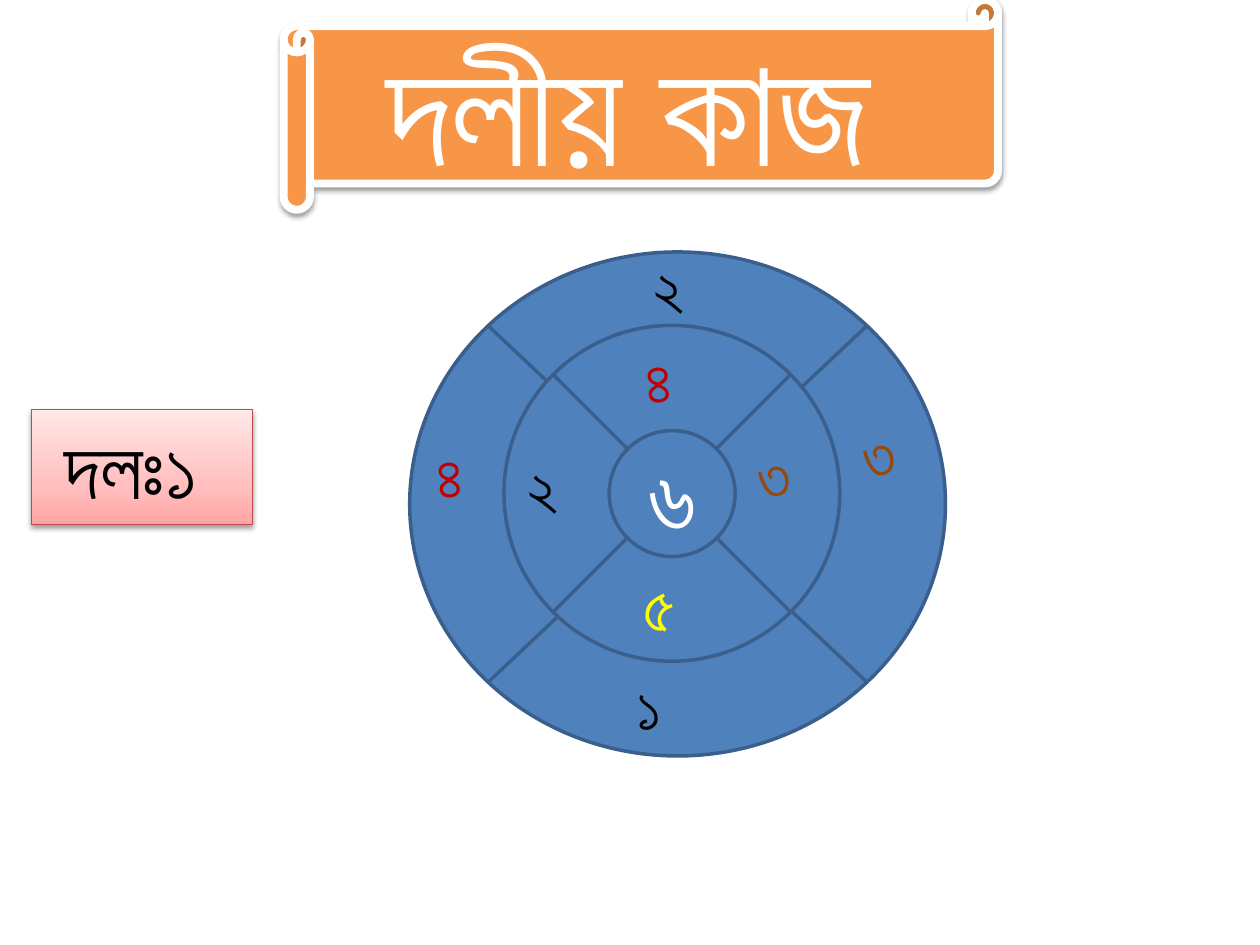
from dataclasses import dataclass

from pptx import Presentation
from pptx.dml.color import RGBColor
from pptx.enum.shapes import MSO_SHAPE
from pptx.enum.text import MSO_ANCHOR, MSO_AUTO_SIZE, PP_ALIGN
from pptx.oxml import parse_xml
from pptx.oxml.ns import nsdecls
from pptx.shapes.autoshape import Shape
from pptx.util import Cm, Pt

SCROLL = MSO_SHAPE.HORIZONTAL_SCROLL
CROSS = MSO_SHAPE.FLOWCHART_SUMMING_JUNCTION
DISC = MSO_SHAPE.FLOWCHART_CONNECTOR
RECT = MSO_SHAPE.RECTANGLE
TOP, MIDDLE = MSO_ANCHOR.TOP, MSO_ANCHOR.MIDDLE
LEFT, CENTER = PP_ALIGN.LEFT, PP_ALIGN.CENTER
FIXED, GROW = MSO_AUTO_SIZE.NONE, MSO_AUTO_SIZE.SHAPE_TO_FIT_TEXT


@dataclass(frozen=True)
class Theme:
    """Hold the colours, font and type sizes of the slide."""

    font: str = "Roboto"
    white: str = "FFFFFF"
    black: str = "000000"
    orange: str = "F79646"
    blue: str = "4F81BD"
    navy: str = "3A5F8C"
    red: str = "C00000"
    brown: str = "984807"
    yellow: str = "FFFF00"
    rose: str = "BF4C48"
    blush: tuple = ((0, "FFA6A5"), (35, "FFC0BF"), (100, "FFE7E7"))
    title: int = 88
    hub: int = 54
    team: int = 48
    large: int = 40
    digit: int = 36


@dataclass(frozen=True)
class Box:
    """Give a place and size in centimetres."""

    left: float
    top: float
    width: float
    height: float

    def lengths(self) -> tuple:
        """Return the four values as lengths."""
        return Cm(self.left), Cm(self.top), Cm(self.width), Cm(self.height)


@dataclass(frozen=True)
class Digit:
    """Describe one digit on the wheel."""

    text: str
    box: Box
    color: str
    size: int = Theme.digit
    align: PP_ALIGN = CENTER


THEME = Theme()
BANNER = Box(5.72, 0, 14.4, 4.23)
HEADING = Box(6.25, 0, 13.6, 4.23)
TEAM = Box(0.64, 8.26, 4.45, 2.31)
HUB = Box(12.28, 8.68, 2.54, 2.54)
RINGS = (Box(8.26, 5.08, 10.8, 10.16), Box(10.16, 6.56, 6.77, 6.77))
INNER = (
    Digit("২ ", Box(10.16, 8.89, 1.91, 1.8), THEME.black),
    Digit("৪ ", Box(12.49, 6.77, 1.91, 1.8), THEME.red),
    Digit("৩ ", Box(14.61, 8.68, 2.33, 1.8), THEME.brown),
    Digit("৫", Box(12.7, 11.22, 1.48, 1.96), THEME.yellow, THEME.large, LEFT),
)
OUTER = (
    Digit("৩ ", Box(16.72, 8.26, 2.33, 1.8), THEME.brown),
    Digit("২ ", Box(12.7, 4.87, 1.91, 1.8), THEME.black),
    Digit("৪ ", Box(8.26, 8.68, 1.91, 1.8), THEME.red),
    Digit("১ ", Box(12.07, 13.34, 2.33, 1.8), THEME.black),
)


def write(shape: Shape, text: str, size: int, color: str, align=CENTER,
          anchor=MIDDLE, fit=FIXED) -> None:
    """Set and format the text of a shape."""
    frame = shape.text_frame
    frame.text = text
    frame.word_wrap = True
    frame.auto_size = fit
    frame.vertical_anchor = anchor
    line = frame.paragraphs[0]
    line.alignment = align
    font = line.runs[0].font
    font.name = THEME.font
    font.size = Pt(size)
    font.color.rgb = RGBColor.from_string(color)
    font._element.append(
        parse_xml(f'<a:cs {nsdecls("a")} typeface="{THEME.font}"/>'))


def draw(shapes, kind, box: Box, edge: str, weight: float, fill="") -> Shape:
    """Add a preset shape without a shadow."""
    shape = shapes.add_shape(kind, *box.lengths())
    if fill:
        shape.fill.solid()
        shape.fill.fore_color.rgb = RGBColor.from_string(fill)
    shape.line.color.rgb = RGBColor.from_string(edge)
    shape.line.width = Pt(weight)
    shape.shadow.inherit = False
    return shape


def shade(shape: Shape) -> None:
    """Add a soft shadow below a shape."""
    shape._element.spPr.effectLst.append(parse_xml(
        f'<a:outerShdw {nsdecls("a")} blurRad="40000" dist="20000" '
        f'dir="5400000" rotWithShape="0"><a:srgbClr val="{THEME.black}">'
        '<a:alpha val="38000"/></a:srgbClr></a:outerShdw>'))


def blend(shape: Shape, stops: tuple) -> None:
    """Fill a shape with a gradient that runs upwards."""
    marks = "".join(f'<a:gs pos="{spot * 1000}"><a:srgbClr val="{color}"/></a:gs>'
                    for spot, color in stops)
    shape._element.spPr.prstGeom.addnext(parse_xml(
        f'<a:gradFill {nsdecls("a")} rotWithShape="1"><a:gsLst>{marks}</a:gsLst>'
        '<a:lin ang="16200000" scaled="0"/></a:gradFill>'))


def place(shapes, digit: Digit) -> None:
    """Add one digit as a text box."""
    label = shapes.add_textbox(*digit.box.lengths())
    write(label, digit.text, digit.size, digit.color, digit.align, TOP, GROW)


def main() -> None:
    """Build the slide and save it."""
    deck = Presentation()
    deck.slide_width, deck.slide_height = Cm(25.4), Cm(19.05)
    slide = deck.slides.add_slide(deck.slide_layouts[5])
    shapes = slide.shapes

    banner = draw(shapes, SCROLL, BANNER, THEME.white, 4.5, THEME.orange)
    shade(banner)
    title = shapes.title
    title.left, title.top, title.width, title.height = HEADING.lengths()
    write(title, "দলীয় কাজ ", THEME.title, THEME.white)
    banner._element.addnext(title._element)

    wheel = shapes.add_group_shape().shapes
    for ring in RINGS:
        draw(wheel, CROSS, ring, THEME.navy, 2, THEME.blue)
    hub = draw(wheel, DISC, HUB, THEME.navy, 2, THEME.blue)
    write(hub, "৬ ", THEME.hub, THEME.white)
    for digit in INNER:
        place(wheel, digit)
    for digit in OUTER:
        place(shapes, digit)

    team = draw(shapes, RECT, TEAM, THEME.rose, 0.75)
    blend(team, THEME.blush)
    shade(team)
    write(team, "দলঃ১ ", THEME.team, THEME.black, anchor=TOP, fit=GROW)

    deck.save("out.pptx")


if __name__ == "__main__":
    main()
